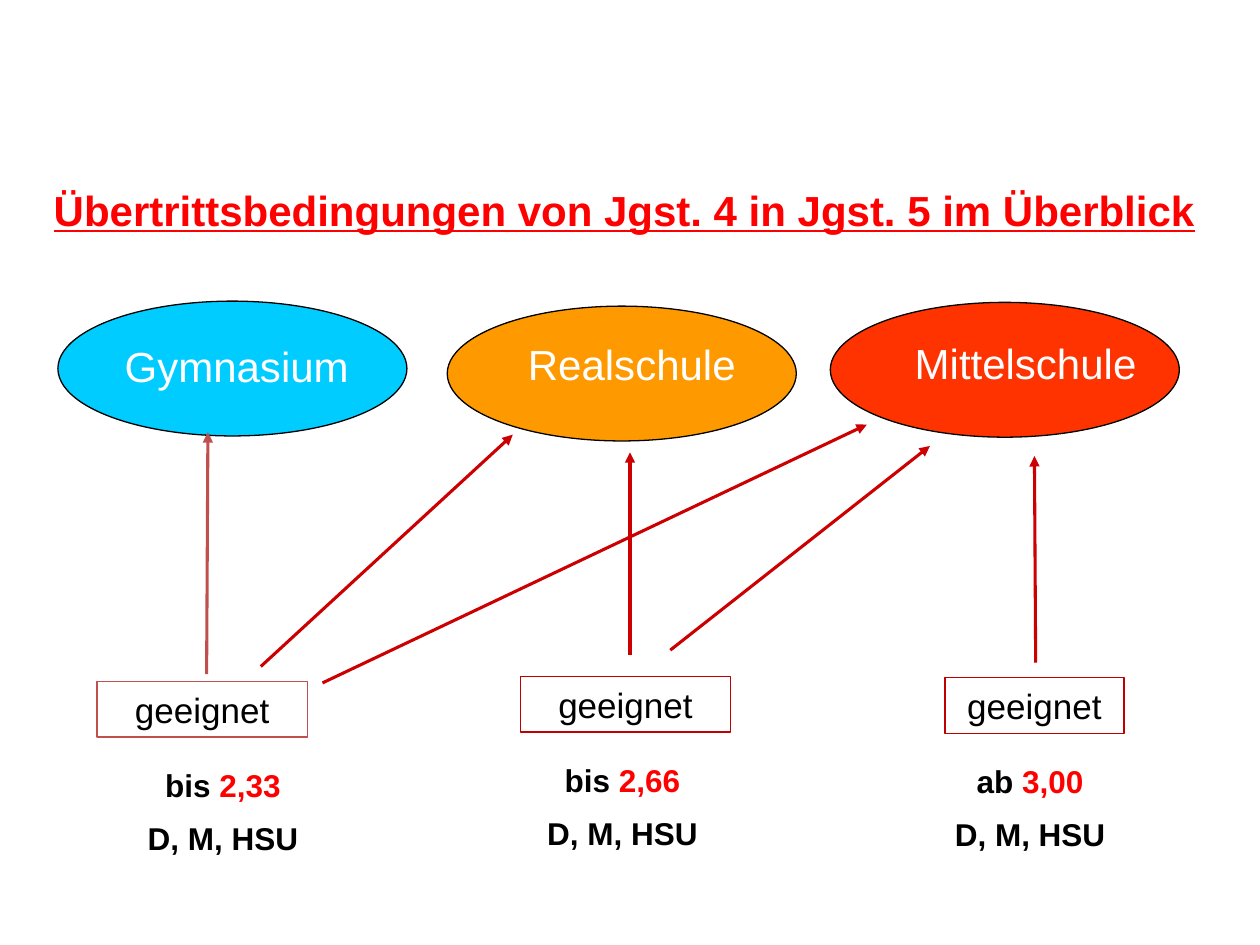
import pptx
import pptx.util
import pptx.dml.color
import pptx.enum.shapes
import pptx.enum.text
from dataclasses import dataclass
from lxml import etree


@dataclass(frozen=True)
class Theme:
    """Colours, type sizes and line widths of the slide."""
    font: str = "Arial"
    black: str = "000000"
    white: str = "FFFFFF"
    red: str = "FF0000"
    arrow: str = "CC0000"
    frame: str = "C00000"
    soft: str = "C0504D"
    blue: str = "00CCFF"
    amber: str = "FF9900"
    flame: str = "FF3300"
    large: int = 24
    medium: int = 20
    small: int = 18
    thin: float = 0.75
    thick: float = 1.75


class Deck:
    """Draws on one slide with a grid of 100 columns by 75 rows."""

    def __init__(self, theme):
        self.theme = theme
        self.file = pptx.Presentation()
        self.file.slide_width = pptx.util.Inches(10)
        self.file.slide_height = pptx.util.Inches(7.5)
        self.cell = self.file.slide_width / 100
        self.slide = self.file.slides.add_slide(self.file.slide_layouts[6])

    def grid(self, *cells):
        """Turn grid cells into lengths."""
        return [round(n * self.cell) for n in cells]

    def tint(self, name):
        """Turn a hex value into a colour."""
        return pptx.dml.color.RGBColor.from_string(name)

    def letter(self, shape, rows, size, bold=False, under=None, center=True):
        """Fill a shape with rows of (text, colour) runs."""
        frame = shape.text_frame
        frame.word_wrap = True
        frame.vertical_anchor = pptx.enum.text.MSO_ANCHOR.MIDDLE
        align = pptx.enum.text.PP_ALIGN
        for i, row in enumerate(rows):
            para = frame.add_paragraph() if i else frame.paragraphs[0]
            para.alignment = align.CENTER if center else align.LEFT
            if i:
                para.space_before = pptx.util.Pt(size / 2)
            for text, color in row:
                run = para.add_run()
                run.text = text
                run.font.name = self.theme.font
                run.font.size = pptx.util.Pt(size)
                run.font.bold = bold
                run.font.underline = under
                run.font.color.rgb = self.tint(color)

    def shape(self, kind, area, line, fill=None):
        """Add an outlined preset shape."""
        shape = self.slide.shapes.add_shape(kind, *self.grid(*area))
        shape.shadow.inherit = False
        shape.line.color.rgb = self.tint(line)
        shape.line.width = pptx.util.Pt(self.theme.thin)
        if fill:
            shape.fill.solid()
            shape.fill.fore_color.rgb = self.tint(fill)
        else:
            shape.fill.background()
        return shape

    def oval(self, area, fill):
        """Add a school ellipse."""
        self.shape(pptx.enum.shapes.MSO_SHAPE.OVAL, area, self.theme.black, fill)

    def box(self, area, line, rows, size, bold=False):
        """Add a framed text."""
        shape = self.shape(pptx.enum.shapes.MSO_SHAPE.RECTANGLE, area, line)
        self.letter(shape, rows, size, bold)

    def label(self, area, text, color, inset=1, **style):
        """Add a single line of large text."""
        shape = self.slide.shapes.add_textbox(*self.grid(*area))
        shape.text_frame.margin_left = self.grid(inset)[0]
        self.letter(shape, [[(text, color)]], self.theme.large, **style)

    def arrow(self, start, end, color):
        """Add a straight arrow."""
        kind = pptx.enum.shapes.MSO_CONNECTOR.STRAIGHT
        link = self.slide.shapes.add_connector(kind, *self.grid(*start, *end))
        link.line.color.rgb = self.tint(color)
        link.line.width = pptx.util.Pt(self.theme.thick)
        space = "{http://schemas.openxmlformats.org/drawingml/2006/main}"
        props = link.element.spPr
        etree.SubElement(props.find(space + "ln"), space + "tailEnd",
                         type="triangle")
        etree.SubElement(props, space + "effectLst")


def main():
    """Build the overview of school transfer conditions."""
    look = Theme()
    deck = Deck(look)
    deck.label((2, 14.1, 95.1, 5.1),
               "Übertrittsbedingungen von Jgst. 4 in Jgst. 5 im Überblick",
               look.red, bold=True, under=True)

    schools = [
        ("Gymnasium", look.blue, (4.6, 23.9), (6.1, 26.5)),
        ("Realschule", look.amber, (35.5, 24.3), (38.1, 26.4)),
        ("Mittelschule", look.flame, (65.9, 24), (68.8, 26.3)),
    ]
    for name, fill, oval, spot in schools:
        deck.oval((*oval, 27.7, 10.7), fill)
        deck.label((*spot, 23.3, 5), name, look.white, inset=3.8, center=False)

    grades = [
        ("bis ", "2,33", look.soft, (7.7, 54.1, 16.7), (7.7, 20)),
        ("bis ", "2,66", look.frame, (41.3, 53.7, 16.7), (39.4, 20)),
        ("ab ", "3,00", look.frame, (75, 53.8, 14.2), (73, 17.5)),
    ]
    for word, mark, line, (left, top, width), (side, span) in grades:
        deck.box((left, top, width, 4.4), line,
                 [[("geeignet", look.black)]], look.medium)
        deck.box((side, top + 6, span, 8.6), look.white,
                 [[(word, look.black), (mark, look.red)],
                  [("D, M, HSU", look.black)]], look.small, bold=True)

    arrows = [
        ((16.4, 53.5), (16.5, 34.3), look.soft),
        ((20.7, 52.9), (40.7, 34.5), look.arrow),
        ((25.6, 54.2), (68.8, 33.7), look.arrow),
        ((50, 52), (50, 35.9), look.arrow),
        ((53.2, 51.6), (73.8, 35.4), look.arrow),
        ((82.2, 52.6), (82.1, 36.2), look.arrow),
    ]
    for start, end, color in arrows:
        deck.arrow(start, end, color)
    deck.file.save("out.pptx")


if __name__ == "__main__":
    main()
